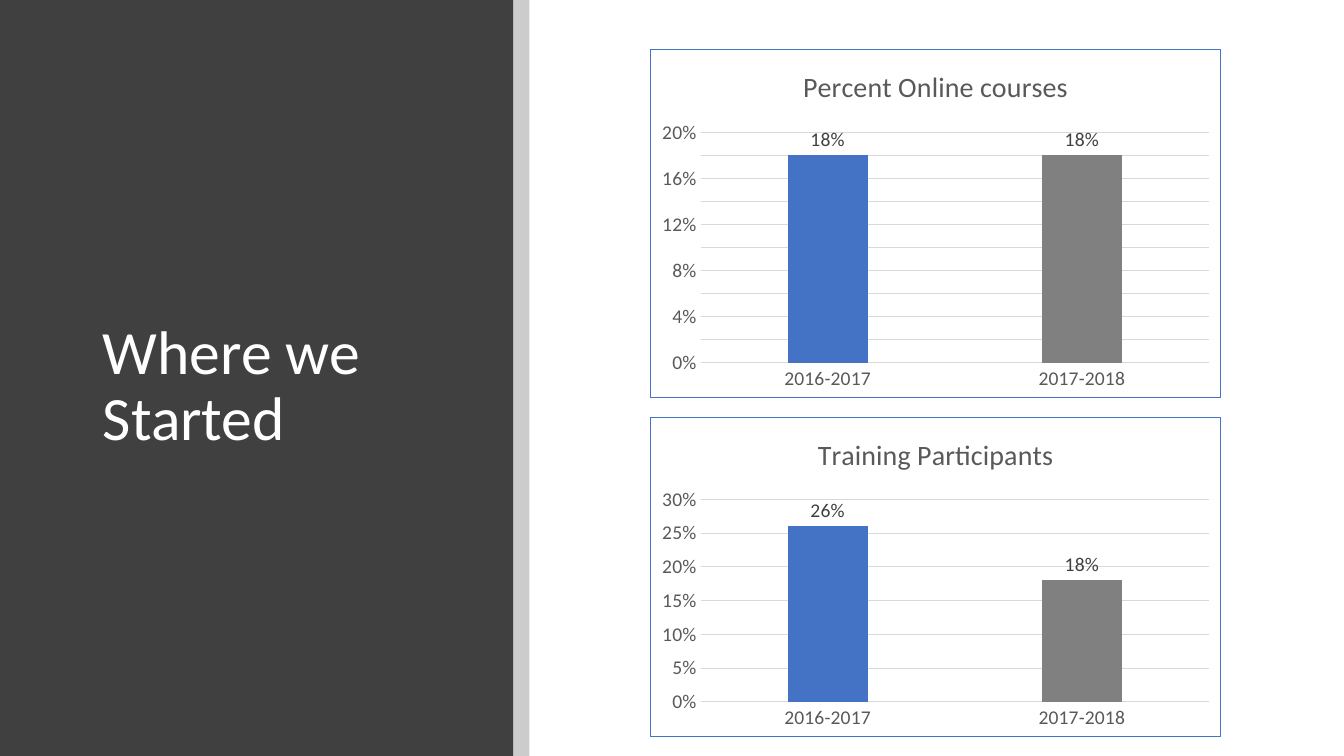
import lxml.etree
import pptx
import pptx.chart.data
import pptx.dml.color
import pptx.enum.chart
import pptx.enum.shapes
import pptx.enum.text
import pptx.oxml
import pptx.oxml.ns
import pptx.util

Inches = pptx.util.Inches
Pt = pptx.util.Pt
RGBColor = pptx.dml.color.RGBColor
qn = pptx.oxml.ns.qn

FONT = "Calibri"
WHITE = RGBColor(0xFF, 0xFF, 0xFF)
BLACK = RGBColor(0x00, 0x00, 0x00)
CHARCOAL = RGBColor(0x40, 0x40, 0x40)
TEXT_GRAY = RGBColor(0x59, 0x59, 0x59)
BAR_GRAY = RGBColor(0x80, 0x80, 0x80)
GRID_GRAY = RGBColor(0xD9, 0xD9, 0xD9)
BLUE = RGBColor(0x44, 0x72, 0xC4)
YEARS = ("2016-2017", "2017-2018")


def style_font(font, size, color):
    """Set the typeface, point size and colour of a font."""
    font.name = FONT
    font.size = Pt(size)
    font.bold = False
    font.color.rgb = color


def add_band(page, left, width, height, color):
    """Add a plain full-height rectangle and return it."""
    band = page.shapes.add_shape(
        pptx.enum.shapes.MSO_SHAPE.RECTANGLE, left, 0, width, height)
    band.shadow.inherit = False
    band.fill.solid()
    band.fill.fore_color.rgb = color
    band.line.fill.background()
    return band


def build_title_panel(page, width, height):
    """Place the dark panel, its translucent edge and the title."""
    title = page.shapes.title
    panel = add_band(page, 0, width, height, CHARCOAL)
    title.element.addprevious(panel.element)
    edge = add_band(page, width, Inches(0.16), height, BLACK)
    color = edge.element.spPr.find(qn("a:solidFill")).find(qn("a:srgbClr"))
    lxml.etree.SubElement(color, qn("a:alpha")).set("val", "20000")

    title.left, title.top = Inches(0.92), Inches(0.89)
    title.width, title.height = width - Inches(1.44), Inches(5.91)
    frame = title.text_frame
    frame.text = "Where we Started"
    frame.word_wrap = True
    frame.auto_size = pptx.enum.text.MSO_AUTO_SIZE.NONE
    frame.vertical_anchor = pptx.enum.text.MSO_ANCHOR.MIDDLE
    para = frame.paragraphs[0]
    para.alignment = pptx.enum.text.PP_ALIGN.LEFT
    para.line_spacing = 0.9
    style_font(para.runs[0].font, 44, WHITE)


def add_chart_border(chart):
    """Frame the chart area with a thin blue line on white."""
    border = pptx.oxml.parse_xml(
        f'<c:spPr {pptx.oxml.ns.nsdecls("c", "a")}>'
        f'<a:solidFill><a:srgbClr val="{WHITE}"/></a:solidFill>'
        f'<a:ln w="{Pt(0.75)}"><a:solidFill><a:srgbClr val="{BLUE}"/>'
        '</a:solidFill></a:ln></c:spPr>')
    chart.element.find(qn("c:chart")).addnext(border)


def style_axes(chart, maximum, step):
    """Format the category and percent axes and the gridlines."""
    for axis in (chart.category_axis, chart.value_axis):
        axis.major_tick_mark = pptx.enum.chart.XL_TICK_MARK.NONE
        axis.minor_tick_mark = pptx.enum.chart.XL_TICK_MARK.NONE
        style_font(axis.tick_labels.font, 14, TEXT_GRAY)
    values = chart.value_axis
    values.minimum_scale, values.maximum_scale = 0, maximum
    values.major_unit = step
    values.tick_labels.number_format = "0%"
    values.tick_labels.number_format_is_linked = False
    values.format.line.fill.background()
    for line in (chart.category_axis.format.line,
                 values.major_gridlines.format.line):
        line.color.rgb = GRID_GRAY
        line.width = Pt(0.75)


def style_bars(chart):
    """Colour the bars by year and label them with their values."""
    plot = chart.plots[0]
    plot.vary_by_categories = False
    plot.gap_width = 219
    plot.overlap = -27
    series = plot.series[0]
    series.format.fill.solid()
    series.format.fill.fore_color.rgb = BLUE
    later = series.points[1].format.fill
    later.solid()
    later.fore_color.rgb = BAR_GRAY
    labels = series.data_labels
    labels.show_value = True
    labels.number_format = "0%"
    labels.number_format_is_linked = False
    labels.position = pptx.enum.chart.XL_LABEL_POSITION.OUTSIDE_END
    style_font(labels.font, 14, CHARCOAL)


def build_percent_chart(page, box, heading, name, shares, maximum, step):
    """Place a bordered column chart of yearly shares in the box."""
    data = pptx.chart.data.CategoryChartData(number_format="0%")
    data.categories = YEARS
    data.add_series(name, shares)
    chart = page.shapes.add_chart(
        pptx.enum.chart.XL_CHART_TYPE.COLUMN_CLUSTERED, *box, data).chart
    style_font(chart.font, 10, BLACK)
    chart.has_legend = False
    chart.has_title = True
    frame = chart.chart_title.text_frame
    frame.text = heading
    style_font(frame.paragraphs[0].runs[0].font, 20, TEXT_GRAY)
    chart.chart_title.include_in_layout = False
    style_axes(chart, maximum, step)
    style_bars(chart)
    add_chart_border(chart)


def main():
    """Build the slide and save the deck."""
    deck = pptx.Presentation()
    deck.slide_width, deck.slide_height = Inches(13.33), Inches(7.5)
    page = deck.slides.add_slide(deck.slide_layouts.get_by_name("Title Only"))
    build_title_panel(page, Inches(5.09), deck.slide_height)
    left, width = Inches(6.45), Inches(5.66)
    build_percent_chart(
        page, (left, Inches(4.14), width, Inches(3.17)),
        "Training Participants", "Series 1", (0.26, 0.18), 0.3, 0.05)
    build_percent_chart(
        page, (left, Inches(0.49), width, Inches(3.46)),
        "Percent Online courses", "Percent Online courses",
        (0.18, 0.18), 0.2, 0.02)
    deck.save("out.pptx")


if __name__ == "__main__":
    main()
